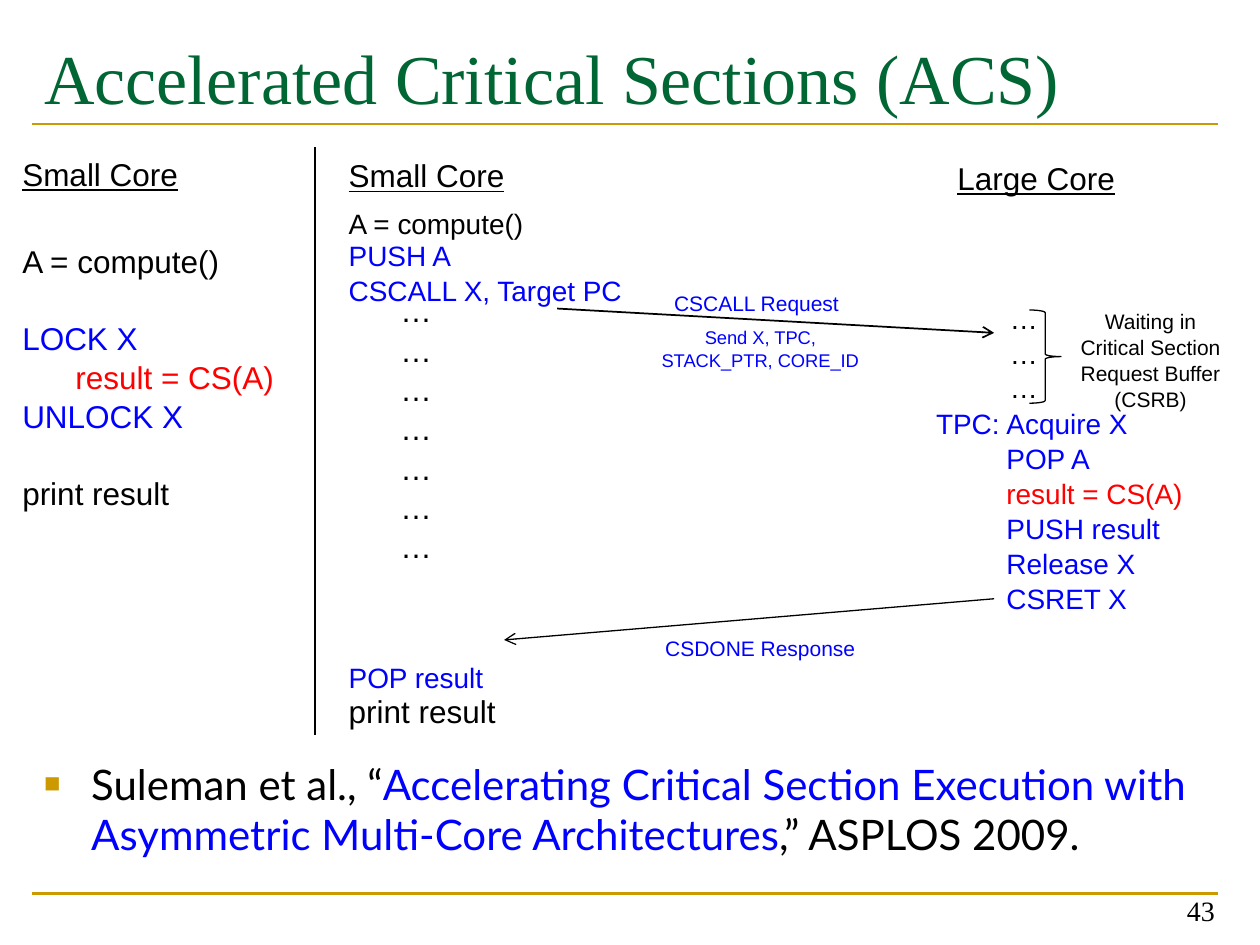
from lxml import etree
from pptx import Presentation
from pptx.dml.color import RGBColor
from pptx.enum import shapes, text
from pptx.oxml import ns
from pptx.util import Cm, Pt

GOLD = RGBColor(0xCC, 0x99, 0x00)
GREEN = RGBColor(0x00, 0x66, 0x33)
BLACK = RGBColor(0x00, 0x00, 0x00)
BLUE = RGBColor(0x00, 0x00, 0xFF)
RED = RGBColor(0xFF, 0x00, 0x00)
LEFT, CENTER, RIGHT = text.PP_ALIGN.LEFT, text.PP_ALIGN.CENTER, text.PP_ALIGN.RIGHT
LINE_SPACING = 1.04


def add_text(page, frame, lines, size, color=BLACK, font="Arial", align=LEFT,
             anchor=text.MSO_ANCHOR.TOP, underline=None):
    """Write one paragraph per line; a line is a string or a (string, color) pair."""
    box = page.shapes.add_textbox(*map(Cm, frame)).text_frame
    box.word_wrap = True
    box.vertical_anchor = anchor
    for index, line in enumerate(lines):
        words, line_color = (line, color) if isinstance(line, str) else line
        para = box.paragraphs[0] if index == 0 else box.add_paragraph()
        para.text = words
        para.alignment = align
        para.line_spacing = LINE_SPACING
        para.font.size = Pt(size)
        para.font.name = font
        para.font.color.rgb = line_color
        para.font.underline = underline
    return box


def add_line(page, start, end, color=BLACK, width=0.75, arrow=False):
    line = page.shapes.add_connector(
        shapes.MSO_CONNECTOR.STRAIGHT, *map(Cm, start + end))
    line.line.color.rgb = color
    line.line.width = Pt(width)
    if arrow:
        etree.SubElement(line.line._get_or_add_ln(), ns.qn("a:tailEnd"), type="arrow")
    etree.SubElement(line._element.spPr, ns.qn("a:effectLst"))


def add_brace(page, frame):
    brace = page.shapes.add_shape(shapes.MSO_SHAPE.RIGHT_BRACE, *map(Cm, frame))
    brace.shadow.inherit = False
    brace.fill.background()
    brace.line.color.rgb = BLACK
    brace.line.width = Pt(0.75)


def add_reference(page):
    box = add_text(page, (0.64, 15.16, 23.93, 2.6), [""], 24, font="Lato")
    para = box.paragraphs[0]
    for words, color in (
        ("Suleman et al., “", BLACK),
        ("Accelerating Critical Section Execution with "
         "Asymmetric Multi-Core Architectures", BLUE),
        (",” ASPLOS 2009.", BLACK),
    ):
        span = para.add_run()
        span.text = words
        span.font.color.rgb = color
    para.line_spacing = 1.0
    properties = para._p.get_or_add_pPr()
    properties.set("marL", str(Cm(0.95)))
    properties.set("indent", str(Cm(-0.95)))
    bullet_color = etree.Element(ns.qn("a:buClr"))
    etree.SubElement(bullet_color, ns.qn("a:srgbClr"), val=str(GOLD))
    bullet = [
        bullet_color,
        etree.Element(ns.qn("a:buSzPct"), val="65000"),
        etree.Element(ns.qn("a:buFont"), typeface="Arial"),
        etree.Element(ns.qn("a:buChar"), char="■"),
    ]
    position = list(properties).index(properties.find(ns.qn("a:lnSpc"))) + 1
    properties[position:position] = bullet


def add_lock_version(page):
    code = add_text(
        page, (0.2, 4.72, 5.72, 5.64),
        ["A = compute()", ("LOCK X", BLUE), ("result = CS(A)", RED),
         ("UNLOCK X", BLUE), "print result"], 18)
    for index in (1, 4):
        code.paragraphs[index].space_before = Pt(21.5)
    code.paragraphs[2]._p.get_or_add_pPr().set("marL", str(Cm(1.07)))


def add_small_core(page):
    add_text(page, (6.78, 4.01, 5.72, 0.94), ["A = compute()"], 16)
    add_text(page, (6.78, 4.65, 6.2, 1.63), ["PUSH A", "CSCALL X, Target PC"], 16, BLUE)
    add_text(page, (7.82, 5.72, 1.1, 5.66), ["…"] * 7, 18)
    add_text(page, (6.78, 13.16, 3.8, 0.94), ["POP result"], 16, BLUE)
    add_text(page, (6.78, 13.79, 3.8, 1.02), ["print result"], 18)


def add_large_core(page):
    add_text(page, (17.78, 5.92, 5.72, 2.31), ["…"] * 3, 16, align=CENTER)
    add_brace(page, (20.75, 6.25, 0.64, 1.88))
    add_text(page, (21.39, 6.07, 3.61, 2.31),
             ["Waiting in Critical Section Request Buffer (CSRB)"], 12, align=CENTER)
    add_text(page, (18.62, 8.05, 2.03, 0.94), ["TPC:"], 16, BLUE)
    add_text(page, (20.04, 8.05, 4.88, 4.32),
             ["Acquire X", "POP A", ("result = CS(A)", RED),
              "PUSH result", "Release X", "CSRET X"], 16, BLUE)


def add_messages(page):
    add_line(page, (11.23, 6.22), (20.04, 6.71), width=1, arrow=True)
    add_text(page, (13.34, 5.72, 3.95, 0.76), ["CSCALL Request"], 12, BLUE)
    add_text(page, (12.98, 6.43, 4.7, 1.09),
             ["Send X, TPC, STACK_PTR, CORE_ID"], 10.5, BLUE, align=CENTER)
    add_line(page, (20.04, 12.07), (10.16, 12.9), arrow=True)
    add_text(page, (13.16, 12.67, 4.83, 0.76), ["CSDONE Response"], 12, BLUE)


def main():
    deck = Presentation()
    deck.slide_width, deck.slide_height = Cm(25.4), Cm(19.05)
    page = deck.slides.add_slide(deck.slide_layouts[6])

    for y in (2.5, 18.01):
        add_line(page, (0.64, y), (24.56, y), GOLD, 1.5)
    add_text(page, (0.64, 0.5, 23.93, 2), ["Accelerated Critical Sections (ACS)"],
             40, GREEN, "Times New Roman")
    add_text(page, (18.82, 17.55, 5.92, 1.27), ["43"], 16, font="Times New Roman",
             align=RIGHT, anchor=text.MSO_ANCHOR.BOTTOM)

    add_line(page, (6.35, 2.97), (6.35, 14.81))
    for x, y, name in ((0.2, 2.97, "Small Core"), (6.78, 3, "Small Core"),
                       (19.05, 3.05, "Large Core")):
        add_text(page, (x, y, 4.45, 1.02), [name], 18, underline=True)

    add_lock_version(page)
    add_small_core(page)
    add_large_core(page)
    add_messages(page)
    add_reference(page)
    deck.save("out.pptx")


if __name__ == "__main__":
    main()
